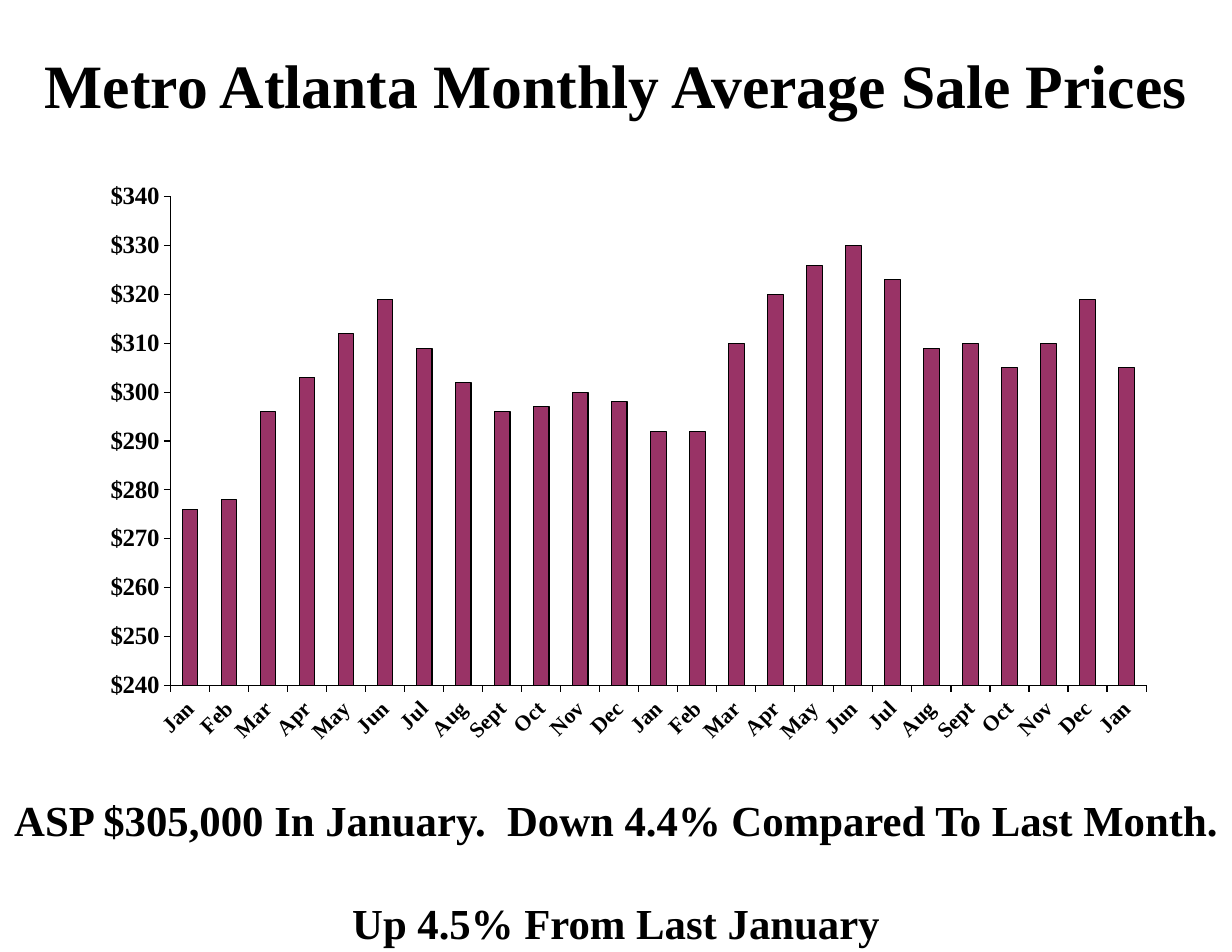
import pptx
import pptx.chart.data
import pptx.dml.color
import pptx.enum.chart
import pptx.enum.text
import pptx.oxml
import pptx.oxml.ns
import pptx.util

Pt = pptx.util.Pt
COLORS = {"ink": "000000", "bar": "993366"}
FACE = "Times New Roman"
YEAR = ["Jan", "Feb", "Mar", "Apr", "May", "Jun",
        "Jul", "Aug", "Sept", "Oct", "Nov", "Dec"]
MONTHS = YEAR * 2 + YEAR[:1]
PRICES = [276, 278, 296, 303, 312, 319, 309, 302, 296, 297, 300, 298,
          292, 292, 310, 320, 326, 330, 323, 309, 310, 305, 310, 319, 305]
PLOT = {"x": 0.107, "y": 0.088, "w": 0.876, "h": 0.717}


def color(name):
    return pptx.dml.color.RGBColor.from_string(COLORS[name])


def assign(target, values):
    for name, value in values.items():
        setattr(target, name, value)


def style(font, size):
    assign(font, {"name": FACE, "size": Pt(size), "bold": True})
    font.color.rgb = color("ink")


def add_text(slide, box, lines, size, gap=0):
    """Add centred lines with a gap in points between them."""
    frame = slide.shapes.add_textbox(*map(Pt, box)).text_frame
    assign(frame, {"word_wrap": True, "margin_left": 0, "margin_right": 0,
                   "margin_top": 0, "margin_bottom": 0})
    for i, line in enumerate(lines):
        para = frame.add_paragraph() if i else frame.paragraphs[0]
        para.text = line
        para.alignment = pptx.enum.text.PP_ALIGN.CENTER
        para.space_before = Pt(gap if i else 0)
        style(para.font, size)


def style_axis(axis, size):
    assign(axis, {"has_major_gridlines": False,
                  "major_tick_mark": pptx.enum.chart.XL_TICK_MARK.OUTSIDE,
                  "minor_tick_mark": pptx.enum.chart.XL_TICK_MARK.NONE})
    style(axis.tick_labels.font, size)
    axis.format.line.color.rgb = color("ink")
    axis.format.line.width = Pt(0.75)


def place_plot(chart):
    """Fix the inner plot area as fractions of the chart."""
    area = chart._chartSpace.chart.plotArea
    for old in area.findall(pptx.oxml.ns.qn("c:layout")):
        area.remove(old)
    parts = '<c:layoutTarget val="inner"/>'
    parts += "".join(f'<c:{k}Mode val="edge"/>' for k in "xy")
    parts += "".join(f'<c:{k} val="{v}"/>' for k, v in PLOT.items())
    area.insert(0, pptx.oxml.parse_xml(
        f'<c:layout {pptx.oxml.ns.nsdecls("c")}>'
        f'<c:manualLayout>{parts}</c:manualLayout></c:layout>'))


def add_bars(slide, box):
    data = pptx.chart.data.CategoryChartData()
    data.categories = MONTHS
    data.add_series("Average sale price", PRICES)
    kind = pptx.enum.chart.XL_CHART_TYPE.COLUMN_CLUSTERED
    chart = slide.shapes.add_chart(kind, *map(Pt, box), data).chart
    assign(chart, {"has_legend": False, "has_title": False})
    style(chart.font, 14)
    place_plot(chart)

    style_axis(chart.category_axis, 14)
    chart.category_axis._element.txPr.bodyPr.set("rot", "-2700000")
    prices = chart.value_axis
    style_axis(prices, 16)
    assign(prices, {"minimum_scale": 240, "maximum_scale": 340,
                    "major_unit": 10})
    assign(prices.tick_labels, {"number_format": '"$"#,##0',
                                "number_format_is_linked": False})

    plot = chart.plots[0]
    assign(plot, {"gap_width": 150, "vary_by_categories": False})
    look = plot.series[0].format
    look.fill.solid()
    look.fill.fore_color.rgb = color("bar")
    look.line.color.rgb = color("ink")
    look.line.width = Pt(0.75)


def main():
    deck = pptx.Presentation()
    assign(deck, {"slide_width": Pt(792), "slide_height": Pt(612)})
    slide = deck.slides.add_slide(deck.slide_layouts[6])
    add_text(slide, (0, 30, 792, 46),
             ["Metro Atlanta Monthly Average Sale Prices"], 39.6)
    add_bars(slide, (33, 88, 716, 438))
    add_text(slide, (0, 510, 792, 100),
             ["ASP $305,000 In January.  Down 4.4% Compared To Last Month.",
              "Up 4.5% From Last January"], 27.5, 33.5)
    deck.save("out.pptx")


if __name__ == "__main__":
    main()
